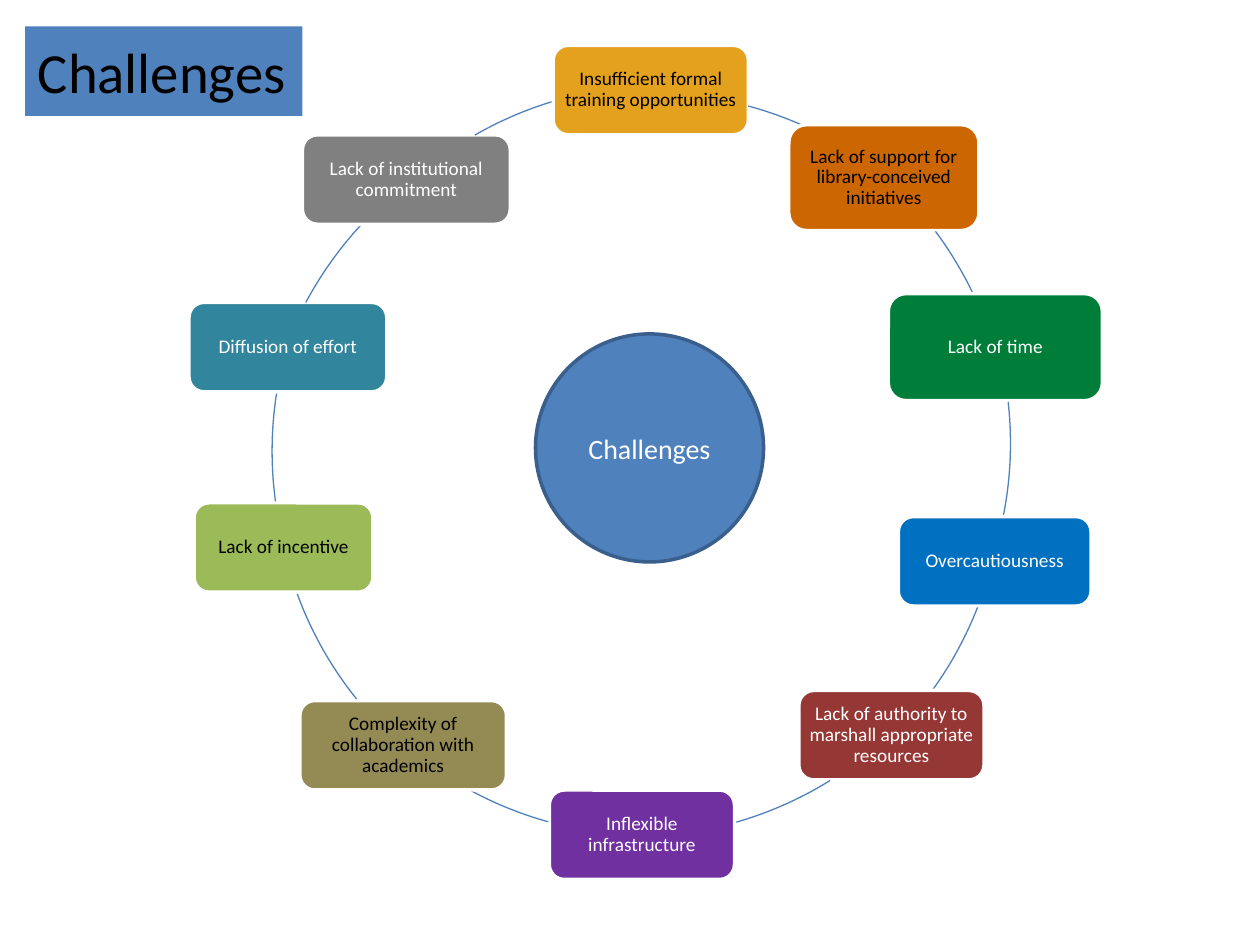
from dataclasses import dataclass

from lxml.etree import SubElement
from pptx import Presentation
from pptx.dml.color import RGBColor
from pptx.enum.shapes import MSO_SHAPE
from pptx.enum.text import MSO_ANCHOR, MSO_AUTO_SIZE, PP_ALIGN
from pptx.oxml.ns import qn
from pptx.util import Inches, Pt


@dataclass(frozen=True)
class Theme:
    """Colours, font and type sizes of the slide."""
    font: str = "Calibri"
    accent: str = "4F81BD"
    hub_edge: str = "3A5F8C"
    dark: str = "000000"
    light: str = "FFFFFF"
    title_size: float = 32.4
    hub_size: float = 16
    label_size: float = 11
    edge: float = 2
    arc_line: float = 0.75


@dataclass(frozen=True)
class Box:
    """A rectangle in inches."""
    left: float
    top: float
    width: float
    height: float

    def inner(self, left, top, width, height):
        """Return a box placed relative to this one."""
        return Box(self.left + left, self.top + top, width, height)

    def lengths(self):
        """Return position and size as slide lengths."""
        return [Inches(n) for n in (self.left, self.top, self.width, self.height)]


@dataclass(frozen=True)
class Challenge:
    """A node of the cycle and the arc that leads on from it."""
    label: str
    fill: str
    ink: str
    node: tuple
    arc_corner: tuple
    arc_angles: tuple


THEME = Theme()
CYCLE_BOX = Box(1.5, 0.36, 7.25, 6.62)
TITLE_BOX = Box(0.2, 0.21, 2.2, 0.71)
NODE_HEIGHT = 0.71
ARC_SIZE = 5.9
HUB = (2.75, 2.29, 1.81, 1.81)

CHALLENGES = [
    Challenge("Insufficient formal training opportunities", "E3A11D", THEME.dark,
              (2.89, 0, 1.55, NODE_HEIGHT), (0.72, 0.38), (285.1, 294)),
    Challenge("Lack of support for library-conceived initiatives", "CC6600", THEME.dark,
              (4.76, 0.63, 1.51, 0.84), (0.61, 0.29), (323.3, 334.5)),
    Challenge("Lack of time", "007E39", THEME.light,
              (5.55, 1.97, 1.7, 0.85), (0.62, 0.21), (353.6, 11.3)),
    Challenge("Overcautiousness", "0070C0", THEME.light,
              (5.63, 3.74, 1.53, NODE_HEIGHT), (0.56, 0.44), (21.3, 35.8)),
    Challenge("Lack of authority to marshall appropriate resources", "953735", THEME.light,
              (4.84, 5.12, 1.47, NODE_HEIGHT), (0.58, 0.38), (58.1, 74.1)),
    Challenge("Inflexible infrastructure", "7030A0", THEME.light,
              (2.86, 5.91, 1.47, NODE_HEIGHT), (0.69, 0.37), (105.5, 118.7)),
    Challenge("Complexity of collaboration with academics", "948A54", THEME.dark,
              (0.88, 5.2, 1.64, NODE_HEIGHT), (0.68, 0.39), (141.2, 160.2)),
    Challenge("Lack of incentive", "9BBB59", THEME.dark,
              (0.04, 3.63, 1.42, NODE_HEIGHT), (0.66, 0.27), (172.2, 189)),
    Challenge("Diffusion of effort", "31859C", THEME.light,
              (0, 2.04, 1.57, NODE_HEIGHT), (0.58, 0.48), (208.1, 222.7)),
    Challenge("Lack of institutional commitment", "808080", THEME.light,
              (0.9, 0.71, 1.65, NODE_HEIGHT), (0.79, 0.32), (240.1, 253)),
]


def paint(part, fill):
    """Give a part a solid fill."""
    part.fill.solid()
    part.fill.fore_color.rgb = RGBColor.from_string(fill)


def outline(part, colour, width):
    """Give a part a line without a shadow."""
    part.shadow.inherit = False
    part.line.color.rgb = RGBColor.from_string(colour)
    part.line.width = Pt(width)


def write(part, text, size, colour, align, spacing=1.0):
    """Set one formatted, vertically centred paragraph."""
    frame = part.text_frame
    frame.text = text
    frame.word_wrap = True
    frame.auto_size = MSO_AUTO_SIZE.NONE
    frame.vertical_anchor = MSO_ANCHOR.MIDDLE
    paragraph = frame.paragraphs[0]
    paragraph.alignment = align
    paragraph.line_spacing = spacing
    font = paragraph.runs[0].font
    font.name = THEME.font
    font.size = Pt(size)
    font.color.rgb = RGBColor.from_string(colour)


def add_title(slide, box):
    """Place the filled slide title."""
    title = slide.shapes.title
    title.left, title.top, title.width, title.height = box.lengths()
    paint(title, THEME.accent)
    write(title, "Challenges", THEME.title_size, THEME.dark, PP_ALIGN.LEFT)


def add_node(shapes, box, challenge):
    """Place one labelled node."""
    node = shapes.add_shape(MSO_SHAPE.ROUNDED_RECTANGLE, *box.lengths())
    paint(node, challenge.fill)
    outline(node, THEME.light, THEME.edge)
    frame = node.text_frame
    frame.margin_left = frame.margin_right = Inches(0.05)
    frame.margin_top = frame.margin_bottom = Inches(0.05)
    write(node, challenge.label, THEME.label_size, challenge.ink, PP_ALIGN.CENTER, 0.9)


def add_arc(shapes, box, angles):
    """Place one arc between two angles in degrees, clockwise from the right."""
    arc = shapes.add_shape(MSO_SHAPE.ARC, *box.lengths())
    for index, angle in enumerate(angles):
        arc.adjustments[index] = angle * 0.6
    arc.fill.background()
    outline(arc, THEME.accent, THEME.arc_line)


def add_cycle(slide, box):
    """Place the ring of challenges around its hub."""
    ring = slide.shapes.add_group_shape().shapes
    for challenge in CHALLENGES:
        add_node(ring, box.inner(*challenge.node), challenge)
        add_arc(ring, box.inner(*challenge.arc_corner, ARC_SIZE, ARC_SIZE), challenge.arc_angles)
    hub = slide.shapes.add_shape(MSO_SHAPE.OVAL, *box.inner(*HUB).lengths())
    paint(hub, THEME.accent)
    outline(hub, THEME.hub_edge, THEME.edge)
    write(hub, "Challenges", THEME.hub_size, THEME.light, PP_ALIGN.CENTER)


def main():
    """Build and save the slide."""
    deck = Presentation()
    deck.slide_width, deck.slide_height = Inches(10), Inches(7.5)
    slide = deck.slides.add_slide(deck.slide_layouts.get_by_name("Title Only"))
    add_cycle(slide, CYCLE_BOX)
    add_title(slide, TITLE_BOX)
    deck.save("out.pptx")


if __name__ == "__main__":
    main()
